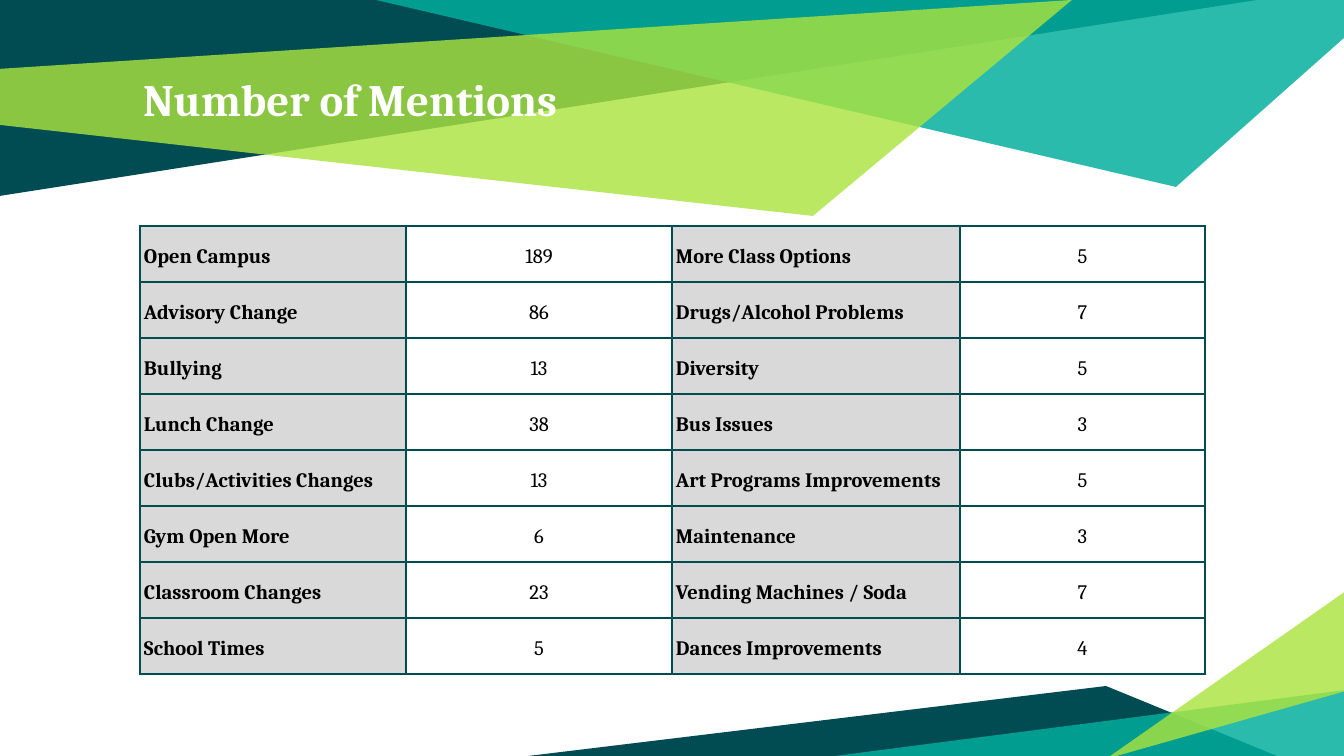
"""Build the "Number of Mentions" slide: angular colour bands and a two-part tally table."""
from dataclasses import dataclass
from typing import NamedTuple

from lxml import etree
from pptx import Presentation
from pptx.dml.color import RGBColor
from pptx.enum.text import MSO_ANCHOR, MSO_AUTO_SIZE, PP_ALIGN
from pptx.oxml.ns import qn
from pptx.util import Emu, Pt

LEFT, CENTER = PP_ALIGN.LEFT, PP_ALIGN.CENTER
TOP, BOTTOM = MSO_ANCHOR.TOP, MSO_ANCHOR.BOTTOM
NO_FIT = MSO_AUTO_SIZE.NONE
EMU_PER_PX = 914400 / 134.4
TITLE_ONLY = 5


@dataclass(frozen=True)
class Theme:
    font: str = "Cambria"
    dark: str = "004C52"
    teal: str = "00AE9D"
    lime: str = "ABE33F"
    label_fill: str = "D9D9D9"
    title_text: str = "FFFFFF"
    table_text: str = "000000"
    title_size: int = 24
    table_size: int = 11
    border_width: float = 1.5
    line_spacing: float = 1.15


class Band(NamedTuple):
    color: str
    opacity: int
    corners: list[tuple[int, int]]


class Mention(NamedTuple):
    topic: str
    count: int


THEME = Theme()

BANDS = [
    Band(THEME.dark, 100, [(0, 0), (0, 196), (1257, 0)]),
    Band(THEME.teal, 83, [(376, 0), (1176, 187), (1344, 38), (1344, 0)]),
    Band(THEME.lime, 81, [(-1, 69), (0, 125), (813, 216), (1072, 0)]),
    Band(THEME.dark, 100, [(528, 756), (1277, 756), (1106, 686)]),
    Band(THEME.teal, 83, [(1346, 690), (1346, 759), (812, 759)]),
    Band(THEME.lime, 81, [(1346, 691), (1346, 591), (1106, 759)]),
]

MENTIONS = [
    (Mention("Open Campus", 189), Mention("More Class Options", 5)),
    (Mention("Advisory Change", 86), Mention("Drugs/Alcohol Problems", 7)),
    (Mention("Bullying", 13), Mention("Diversity", 5)),
    (Mention("Lunch Change", 38), Mention("Bus Issues", 3)),
    (Mention("Clubs/Activities Changes", 13), Mention("Art Programs Improvements", 5)),
    (Mention("Gym Open More", 6), Mention("Maintenance", 3)),
    (Mention("Classroom Changes", 23), Mention("Vending Machines / Soda", 7)),
    (Mention("School Times", 5), Mention("Dances Improvements", 4)),
]

COLUMN_WIDTHS = [266, 266, 288, 245]
ROW_HEIGHT = 56


def px(length: int) -> Emu:
    return Emu(round(length * EMU_PER_PX))


def apply(target, **values) -> None:
    for name, value in values.items():
        setattr(target, name, value)


def write(paragraph, text: str, size: int, color: str, bold: bool) -> None:
    run = paragraph.add_run()
    run.text = text
    apply(run.font, name=THEME.font, size=Pt(size), bold=bold)
    run.font.color.rgb = RGBColor.from_string(color)


def draw_band(slide, band: Band) -> None:
    start, *rest = band.corners
    builder = slide.shapes.build_freeform(*start, scale=EMU_PER_PX)
    builder.add_line_segments(rest, close=True)
    facet = builder.convert_to_shape()
    facet.shadow.inherit = False
    facet.line.fill.background()
    facet.fill.solid()
    facet.fill.fore_color.rgb = RGBColor.from_string(band.color)
    if band.opacity < 100:
        color = facet._element.spPr.find(qn("a:solidFill")).find(qn("a:srgbClr"))
        etree.SubElement(color, qn("a:alpha"), val=str(band.opacity * 1000))


def place_title(slide, text: str) -> None:
    title = slide.shapes.title
    slide.shapes._spTree.append(title._element)
    apply(title, left=px(130), top=px(59), width=px(1083), height=px(126))
    frame = title.text_frame
    apply(frame, word_wrap=True, auto_size=NO_FIT, vertical_anchor=TOP,
          margin_left=px(13), margin_right=px(13), margin_top=px(13), margin_bottom=px(13))
    frame.paragraphs[0].alignment = LEFT
    write(frame.paragraphs[0], text, THEME.title_size, THEME.title_text, True)


def outline_cell(cell) -> None:
    properties = cell._tc.get_or_add_tcPr()
    for side in ("a:lnL", "a:lnR", "a:lnT", "a:lnB"):
        edge = etree.SubElement(properties, qn(side), w=str(Pt(THEME.border_width)))
        fill = etree.SubElement(edge, qn("a:solidFill"))
        etree.SubElement(fill, qn("a:srgbClr"), val=THEME.dark)


def fill_cell(cell, text: str, is_label: bool) -> None:
    apply(cell, vertical_anchor=BOTTOM, margin_left=px(4), margin_right=px(4),
          margin_top=px(13), margin_bottom=px(13))
    outline_cell(cell)
    if is_label:
        cell.fill.solid()
        cell.fill.fore_color.rgb = RGBColor.from_string(THEME.label_fill)
    else:
        cell.fill.background()
    paragraph = cell.text_frame.paragraphs[0]
    apply(paragraph, alignment=LEFT if is_label else CENTER, line_spacing=THEME.line_spacing)
    write(paragraph, text, THEME.table_size, THEME.table_text, is_label)


def draw_mentions(slide) -> None:
    tally = slide.shapes.add_table(
        len(MENTIONS), len(COLUMN_WIDTHS), px(140), px(226),
        px(sum(COLUMN_WIDTHS)), px(ROW_HEIGHT * len(MENTIONS))).table
    apply(tally, first_row=False, horz_banding=False)
    for column, width in zip(tally.columns, COLUMN_WIDTHS):
        column.width = px(width)
    for row, pair in zip(tally.rows, MENTIONS):
        row.height = px(ROW_HEIGHT)
        for index, mention in enumerate(pair):
            fill_cell(row.cells[2 * index], mention.topic, True)
            fill_cell(row.cells[2 * index + 1], str(mention.count), False)


def main() -> None:
    deck = Presentation()
    apply(deck, slide_width=px(1344), slide_height=px(756))
    slide = deck.slides.add_slide(deck.slide_layouts[TITLE_ONLY])
    for band in BANDS:
        draw_band(slide, band)
    place_title(slide, "Number of Mentions")
    draw_mentions(slide)
    deck.save("out.pptx")


if __name__ == "__main__":
    main()
